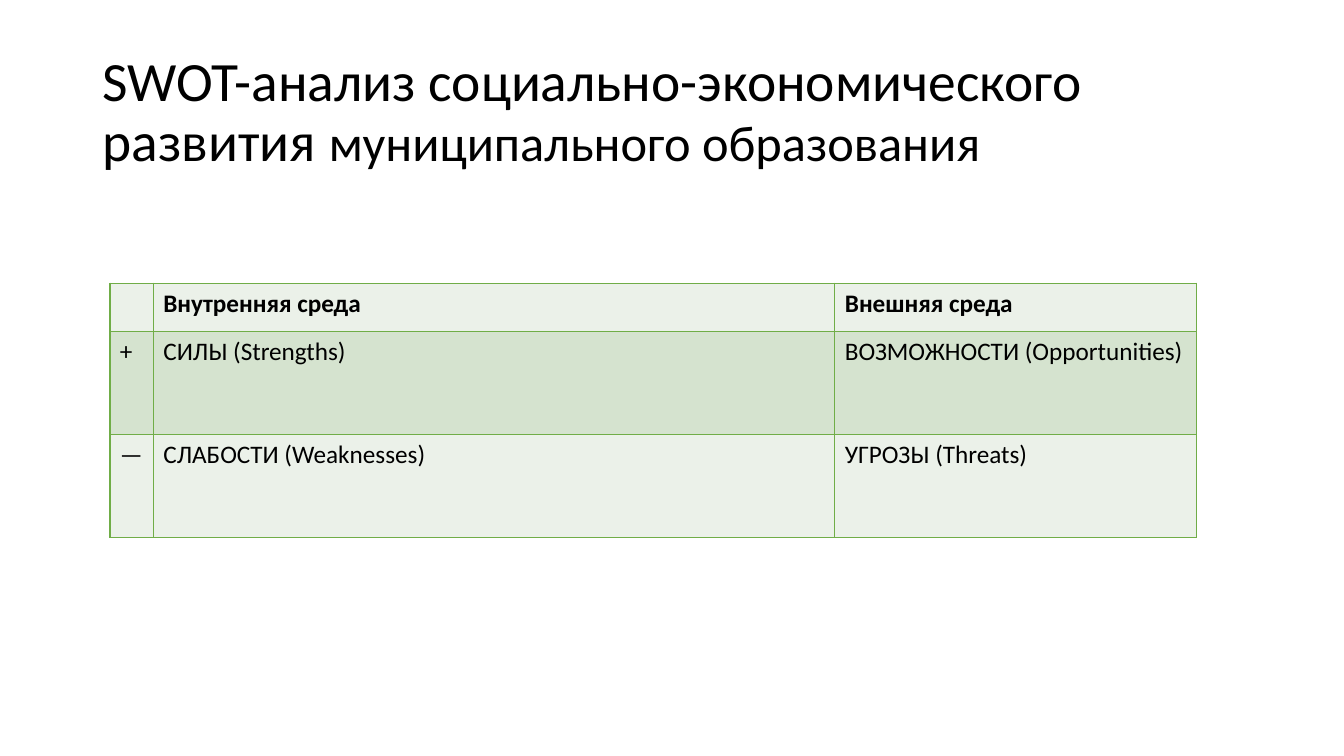
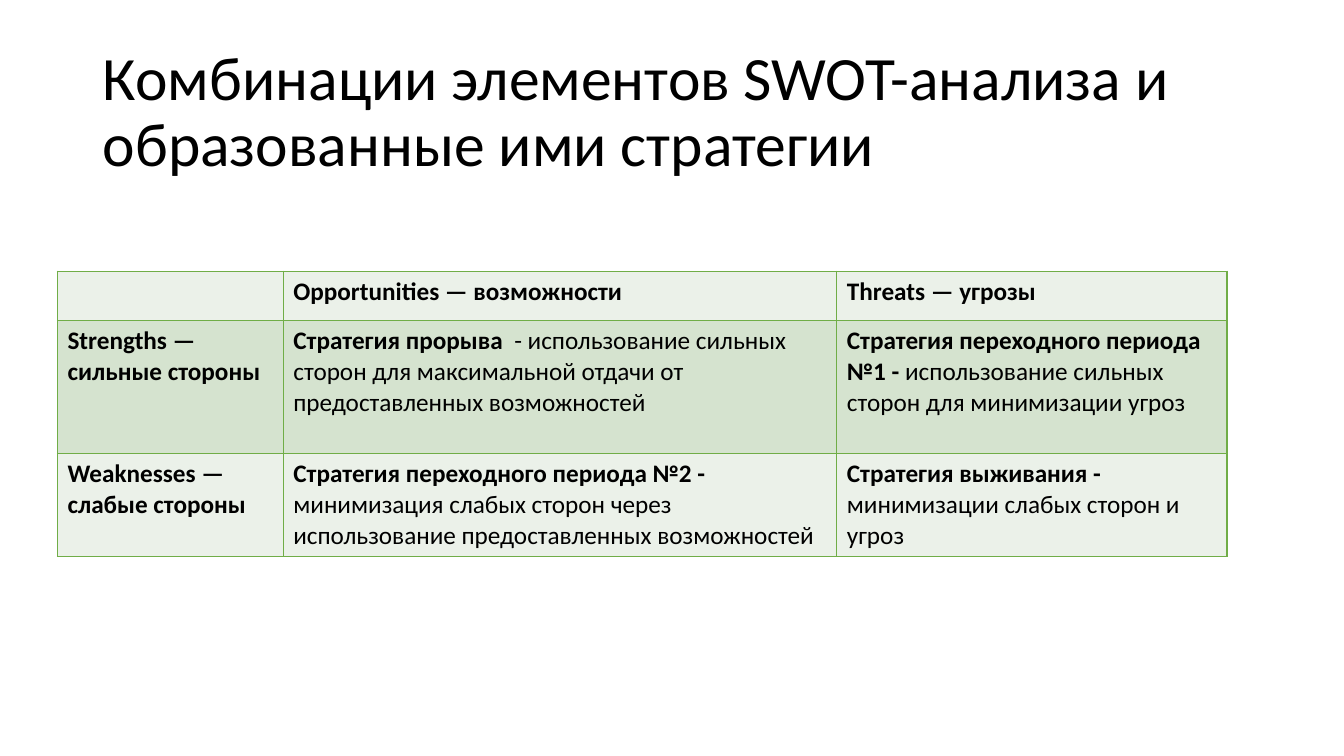
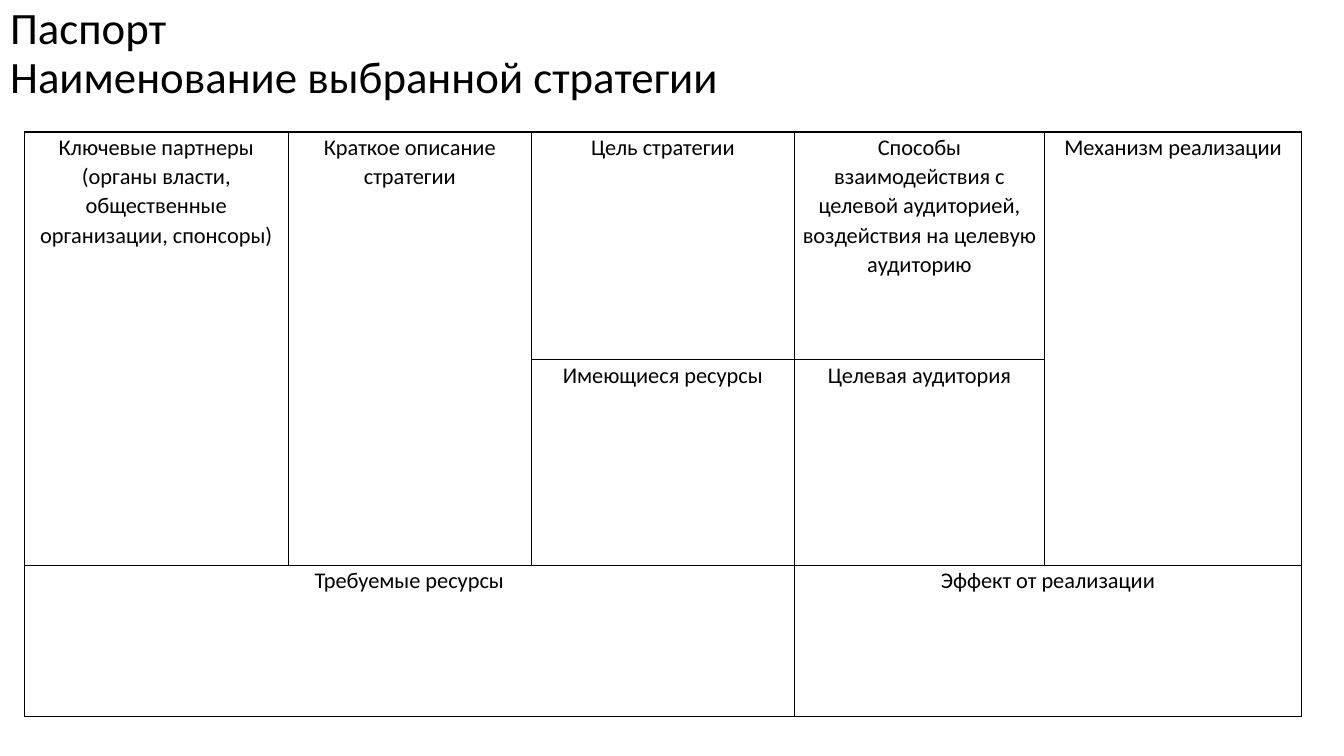
from lxml import etree
from pptx import Presentation
from pptx.dml.color import RGBColor
from pptx.enum.text import MSO_ANCHOR, MSO_AUTO_SIZE, PP_ALIGN
from pptx.oxml.ns import qn
from pptx.util import Inches, Pt

LEFT = PP_ALIGN.LEFT
CENTER = PP_ALIGN.CENTER
MIDDLE = MSO_ANCHOR.MIDDLE
NO_AUTOFIT = MSO_AUTO_SIZE.NONE
TITLE_ONLY = 5

FONT = "Calibri"
COLORS = {
    "text": "000000",
    "paper": "FFFFFF",
    "grid": "70AD47",
    "light": "EBF1E9",
    "band": "D5E3CF",
}
SWOT_BANDS = ("light", "band")
TITLE_BOX = (0.92, 0.4, 11.5, 1.45)


class Deck:
    def __init__(self):
        self.presentation = Presentation()
        self.presentation.slide_width = Inches(13.33)
        self.presentation.slide_height = Inches(7.5)
        self.slide = None

    def add_slide(self):
        layout = self.presentation.slide_layouts[TITLE_ONLY]
        self.slide = self.presentation.slides.add_slide(layout)

    def style(self, paragraph, size, alignment, spacing):
        paragraph.alignment = alignment
        paragraph.line_spacing = spacing
        paragraph.font.name = FONT
        paragraph.font.size = Pt(size)
        paragraph.font.color.rgb = RGBColor.from_string(COLORS["text"])

    def title(self, text, size, box=TITLE_BOX, ending="", ending_size=None):
        shape = self.slide.shapes.title
        shape.left, shape.top, shape.width, shape.height = map(Inches, box)
        frame = shape.text_frame
        frame.auto_size = NO_AUTOFIT
        frame.word_wrap = True
        frame.vertical_anchor = MIDDLE
        paragraph = frame.paragraphs[0]
        paragraph.text = text
        self.style(paragraph, size, LEFT, 0.9)
        if ending:
            run = paragraph.add_run()
            run.text = ending
            run.font.size = Pt(ending_size)

    def borders(self, cell, color):
        properties = cell._tc.get_or_add_tcPr()
        for side in ("a:lnL", "a:lnR", "a:lnT", "a:lnB"):
            line = etree.SubElement(properties, qn(side), w=str(Pt(1)))
            fill = etree.SubElement(line, qn("a:solidFill"))
            etree.SubElement(fill, qn("a:srgbClr"), val=COLORS[color])

    def table(self, left, top, columns, rows, cells, bands=SWOT_BANDS, grid="grid",
              size=18, alignment=LEFT, spacing=1.0, margins=(0.1, 0.05), merges=()):
        frame = self.slide.shapes.add_table(
            len(rows), len(columns), Inches(left), Inches(top),
            Inches(sum(columns)), Inches(sum(rows)))
        table = frame.table
        table.first_row = False
        table.horz_banding = False
        for column, width in zip(table.columns, columns):
            column.width = Inches(width)
        for row, height in zip(table.rows, rows):
            row.height = Inches(height)
        for row_index, row_cells in enumerate(cells):
            for column_index, parts in enumerate(row_cells):
                cell = table.cell(row_index, column_index)
                self.borders(cell, grid)
                cell.fill.solid()
                band = bands[row_index % len(bands)]
                cell.fill.fore_color.rgb = RGBColor.from_string(COLORS[band])
                cell.margin_left = cell.margin_right = Inches(margins[0])
                cell.margin_top = cell.margin_bottom = Inches(margins[1])
                paragraph = cell.text_frame.paragraphs[0]
                self.style(paragraph, size, alignment, spacing)
                for text, bold in zip(parts, (True, False)):
                    if text:
                        run = paragraph.add_run()
                        run.text = text
                        run.font.bold = bold
        for first, last in merges:
            table.cell(*first).merge(table.cell(*last))


def strong(text):
    return text, ""


def plain(text):
    return "", text


def swot_slide(deck):
    deck.add_slide()
    deck.title("SWOT-анализ социально-экономического развития ", 39.6,
               ending="муниципального образования", ending_size=36)
    deck.table(1.09, 2.81, (0.43, 6.76, 3.59), (0.48, 1.02, 1.02), [
        [plain(""), strong("Внутренняя среда"), strong("Внешняя среда")],
        [plain("+"), plain("СИЛЫ (Strengths)"), plain("ВОЗМОЖНОСТИ (Opportunities)")],
        [plain("—"), plain("СЛАБОСТИ (Weaknesses)"), plain("УГРОЗЫ (Threats)")],
    ])


def strategies_slide(deck):
    deck.add_slide()
    deck.title("Комбинации элементов SWOT-анализа и образованные ими стратегии", 44)
    deck.table(0.57, 2.69, (2.24, 5.49, 3.87), (0.49, 1.32, 1.02), [
        [plain(""), strong("Opportunities — возможности"), strong("Threats — угрозы")],
        [strong("Strengths — сильные стороны"),
         ("Стратегия прорыва ",
          " - использование сильных сторон для максимальной отдачи "
          "от предоставленных возможностей"),
         ("Стратегия переходного периода №1 -",
          " использование сильных сторон для минимизации угроз")],
        [strong("Weaknesses — слабые стороны"),
         ("Стратегия переходного периода №2 - ",
          "минимизация слабых сторон через использование "
          "предоставленных возможностей"),
         ("Стратегия выживания -", " минимизации слабых сторон и угроз")],
    ])


def passport_slide(deck):
    deck.add_slide()
    deck.title("Паспорт\vНаименование выбранной стратегии", 32, (0, 0, 11.41, 1.08))
    empty = plain("")
    deck.table(
        0.24, 1.31, (2.62, 2.41, 2.61, 2.48, 2.55), (2.26, 2.04, 1.5), [
            [plain("Ключевые партнеры (органы власти, общественные организации, спонсоры)"),
             plain("Краткое описание стратегии"),
             plain("Цель стратегии"),
             plain("Способы взаимодействия с целевой аудиторией, "
                   "воздействия на целевую аудиторию"),
             plain("Механизм реализации")],
            [empty, empty, plain("Имеющиеся ресурсы"), plain("Целевая аудитория"), empty],
            [plain("Требуемые ресурсы"), empty, empty, plain("Эффект от реализации"), empty],
        ],
        bands=("paper",), grid="text", size=16, alignment=CENTER, spacing=1.07,
        margins=(0.07, 0),
        merges=[((0, 0), (1, 0)), ((0, 1), (1, 1)), ((0, 4), (1, 4)),
                ((2, 0), (2, 2)), ((2, 3), (2, 4))])


def main():
    deck = Deck()
    swot_slide(deck)
    strategies_slide(deck)
    passport_slide(deck)
    deck.presentation.save("out.pptx")


if __name__ == "__main__":
    main()
